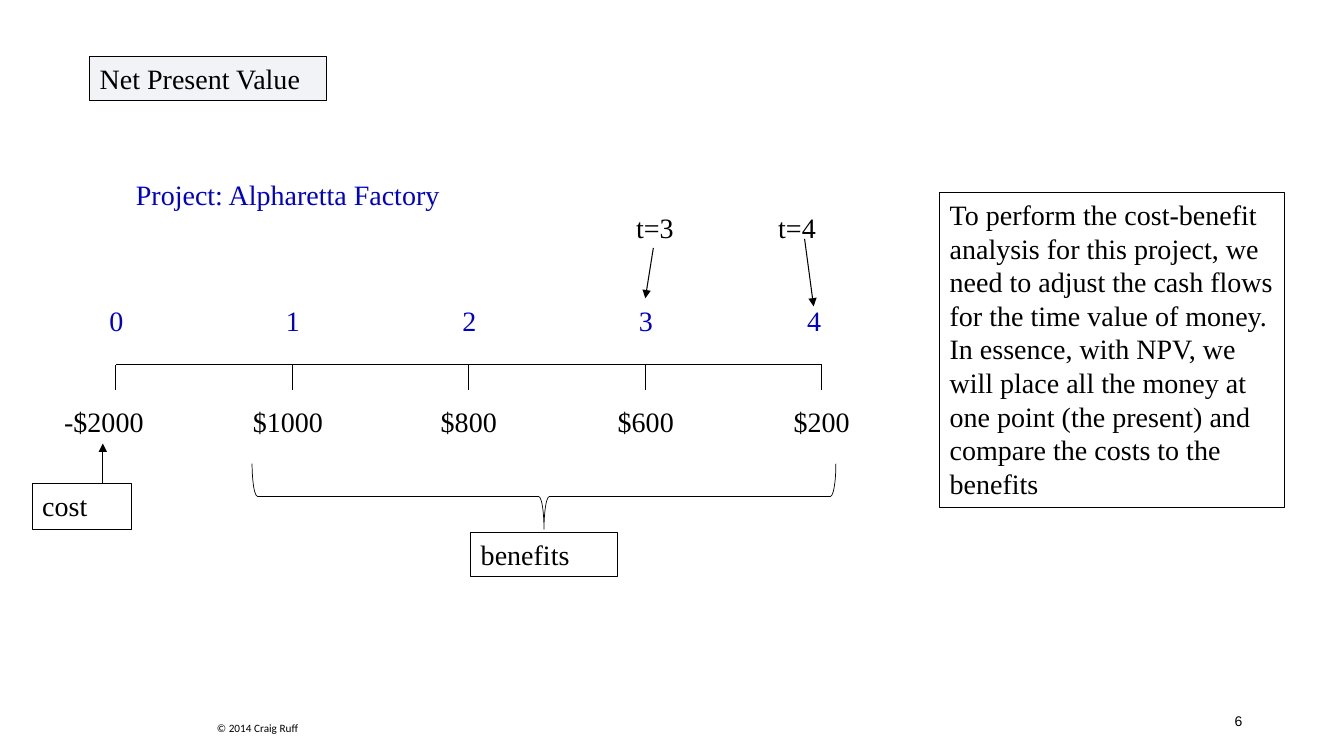
from lxml import etree
from pptx import Presentation
from pptx import util as u
from pptx.dml.color import RGBColor
from pptx.enum import shapes, text
from pptx.oxml.ns import qn

PX = 9144  # EMU in one px, 100 px to the inch
BLACK, BLUE, NAVY = "000000", "0000CC", "002060"
LEFT, CENTER, RIGHT = text.PP_ALIGN.LEFT, text.PP_ALIGN.CENTER, text.PP_ALIGN.RIGHT

# Timeline: year label, its shift from the tick, cash flow, its left and width
PERIODS = [
    ("0", 0, "-$2000", 32, 142),
    ("1", 0, "$1000", 223, 125),
    ("2", 0, "$800", 390, 150),
    ("3", 0, "$600", 582, 117),
    ("4", -8, "$200", 765, 100),
]
AXIS_LEFT, AXIS_TOP, PERIOD_STEP, TICK = 115, 362, 175, 25
YEAR_TOP, YEAR_WIDTH, CASH_TOP, LABEL_HEIGHT = 296, 83, 396, 44

# Captions without a frame: wording, box, format
CAPTIONS = [
    ("Project: Alpharetta Factory", (73, 171, 425, 44), dict(color=BLUE)),
    ("t=3 ", (582, 204, 142, 44), {}),
    ("t=4 ", (723, 204, 142, 44), {}),
    ("6", (942, 695, 300, 40),
     dict(size=10, font="Arial", align=RIGHT, anchor=text.MSO_ANCHOR.MIDDLE)),
    ("© 2014 Craig Ruff", (195, 711, 121, 24), dict(size=8, font="Calibri")),
]

# Framed notes: wording, box, fill
NOTES = [
    ("benefits", (467, 528, 146, 44), None),
    ("cost", (32, 480, 98, 45), None),
    ("Net Present Value", (89, 56, 235, 44), NAVY),
    ("To perform the cost-benefit analysis for this project, we need to adjust "
     "the cash flows for the time value of money.  In essence, with NPV, we will "
     "place all the money at one point (the present) and compare the costs to "
     "the benefits", (932, 191, 342, 313), None),
]
NAVY_ALPHA = 5  # percent

# Arrows: start, end, line width
ARROWS = [
    ((798, 237), (807, 304), 0.75),
    ((648, 246), (640, 296), 0.75),
    ((102, 480), (102, 440), 0.5),
]
BENEFITS_BRACE = (507, 203, 65, 579)  # box before the quarter turn


def px(*lengths):
    return [u.Emu(length * PX) for length in lengths]


def rgb(code):
    return RGBColor.from_string(code)


def write(shape, words, size=20, font="Times New Roman", color=BLACK,
          align=CENTER, anchor=text.MSO_ANCHOR.TOP):
    frame = shape.text_frame
    frame.word_wrap = True
    frame.vertical_anchor = anchor
    paragraph = frame.paragraphs[0]
    paragraph.alignment = align
    run = paragraph.add_run()
    run.text = words
    run.font.size = u.Pt(size)
    run.font.name = font
    run.font.color.rgb = rgb(color)


def add_caption(words, box, **style):
    write(slide.shapes.add_textbox(*px(*box)), words, **style)


def add_outline(kind, box, width, fill=None):
    shape = slide.shapes.add_shape(kind, *px(*box))
    shape.shadow.inherit = False
    shape.line.color.rgb = rgb(BLACK)
    shape.line.width = u.Pt(width)
    if fill:
        shape.fill.solid()
        shape.fill.fore_color.rgb = rgb(fill)
        tint = shape.fill._xPr.find(".//" + qn("a:srgbClr"))
        etree.SubElement(tint, qn("a:alpha"), val=str(NAVY_ALPHA * 1000))
    else:
        shape.fill.background()
    return shape


def add_line(start, end, width=0.75, arrow=False):
    line = slide.shapes.add_connector(
        shapes.MSO_CONNECTOR.STRAIGHT, *px(*start, *end))
    line.line.color.rgb = rgb(BLACK)
    line.line.width = u.Pt(width)
    if arrow:
        etree.SubElement(line.line._get_or_add_ln(), qn("a:tailEnd"), type="triangle")
    etree.SubElement(line._element.spPr, qn("a:effectLst"))


deck = Presentation()
deck.slide_width, deck.slide_height = px(1333, 750)
slide = deck.slides.add_slide(deck.slide_layouts[6])

for i, (year, shift, cash, cash_left, cash_width) in enumerate(PERIODS):
    tick_x = AXIS_LEFT + i * PERIOD_STEP
    add_line((tick_x, AXIS_TOP), (tick_x, AXIS_TOP + TICK))
    year_left = tick_x - YEAR_WIDTH // 2 + shift
    add_caption(year, (year_left, YEAR_TOP, YEAR_WIDTH, LABEL_HEIGHT), color=BLUE)
    add_caption(cash, (cash_left, CASH_TOP, cash_width, LABEL_HEIGHT))
axis_right = AXIS_LEFT + (len(PERIODS) - 1) * PERIOD_STEP
add_line((AXIS_LEFT, AXIS_TOP), (axis_right, AXIS_TOP))

for words, box, style in CAPTIONS:
    add_caption(words, box, **style)

brace = add_outline(shapes.MSO_SHAPE.RIGHT_BRACE, BENEFITS_BRACE, 0.5)
brace.rotation = 90

for words, box, fill in NOTES:
    note = add_outline(shapes.MSO_SHAPE.RECTANGLE, box, 0.75, fill)
    write(note, words, align=LEFT)

for start, end, width in ARROWS:
    add_line(start, end, width, arrow=True)

deck.save("out.pptx")
